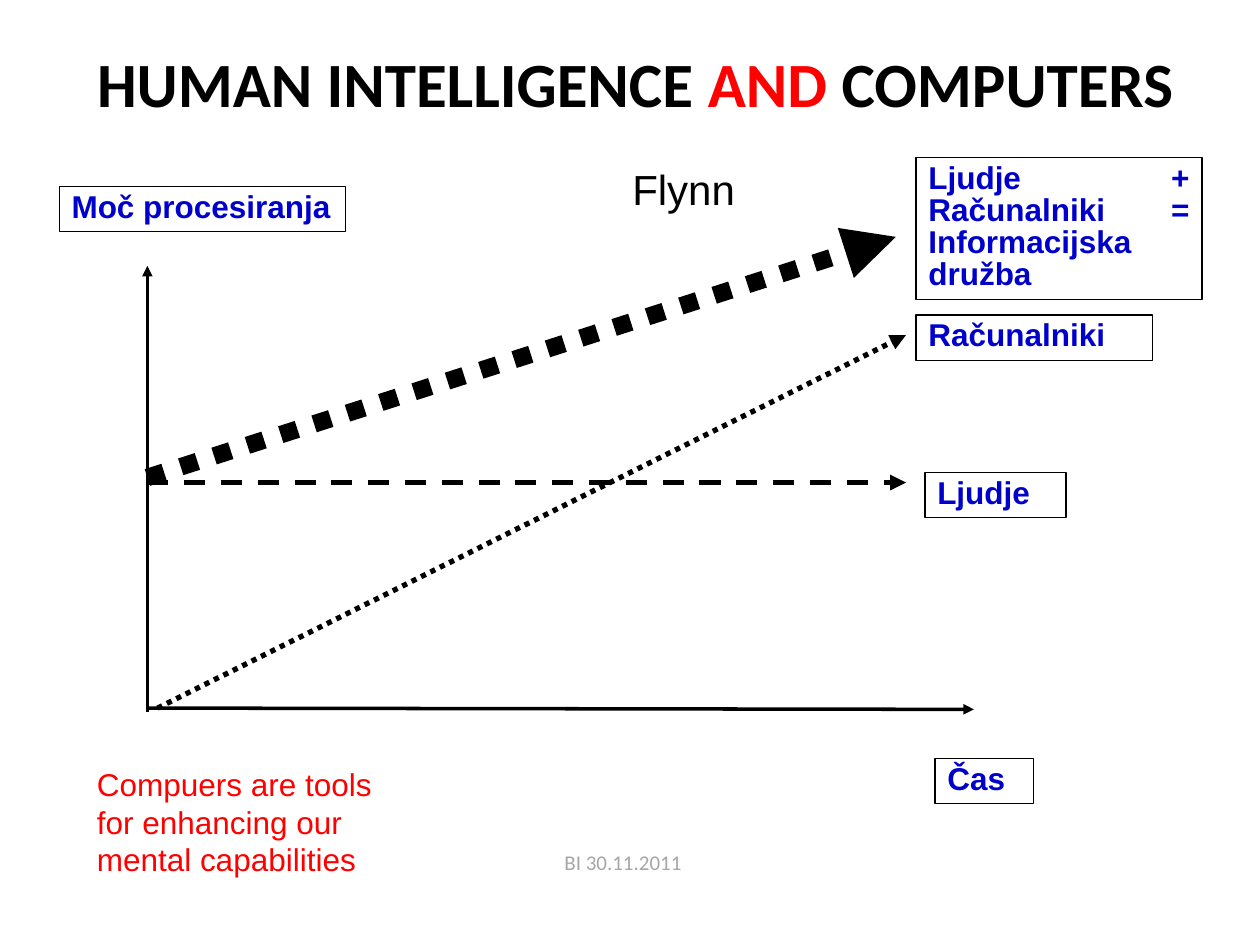
from pptx import Presentation
from pptx.dml.color import RGBColor
from pptx.enum.dml import MSO_LINE
from pptx.enum.shapes import MSO_CONNECTOR, MSO_SHAPE
from pptx.enum.text import MSO_ANCHOR, PP_ALIGN as Align
from pptx.oxml.ns import qn
from pptx.util import Inches, Pt
from lxml.etree import SubElement

COLORS = {"black": "000000", "white": "FFFFFF", "red": "FF0000",
          "blue": "0000CC", "gray": "A6A6A6"}

TITLE = [("HUMAN INTELLIGENCE ", "black"), ("AND ", "red"), ("COMPUTERS", "black")]
TITLE_AREA = (0.67, 0.3, 8.98, 0.71)

# Label, (left, top, width, height)
LABELS = [
    ("Moč procesiranja", (0.47, 1.48, 2.27, 0.36)),
    ("Čas", (7.42, 6.02, 0.78, 0.36)),
    ("Ljudje", (7.34, 3.75, 1.12, 0.36)),
    ("Računalniki", (7.27, 2.5, 1.88, 0.36)),
    ("Ljudje + Računalniki = Informacijska družba", (7.27, 1.25, 2.27, 1.13)),
]

# Start, end, width in points, dash
AXIS_X = 1.17
ARROWS = [
    ((AXIS_X, 5.62), (7.73, 5.63), 2, None),
    ((1.25, 5.62), (7.19, 2.66), 3, MSO_LINE.ROUND_DOT),
    ((AXIS_X, 3.83), (7.19, 3.83), 3, MSO_LINE.DASH),
    ((AXIS_X, 5.65), (AXIS_X, 2.11), 2, None),
    ((AXIS_X, 3.79), (7.11, 1.88), 10, MSO_LINE.ROUND_DOT),
]

# Text, area, size, font, colour, alignment, wrap
NOTES = [
    ("Flynn", (4.92, 1.25, 1.26, 0.5), 24, "Arial", "black", Align.LEFT, True),
    ("BI 30.11.2011", (2.81, 6.69, 4.27, 0.52), 12, "Calibri", "gray", Align.CENTER, False),
    ("Compuers are tools for enhancing our mental capabilities",
     (0.67, 6.02, 2.68, 1.01), 18, "Arial", "red", Align.LEFT, True),
]

LABEL_SPACING = {"alignment": Align.JUSTIFY, "line_spacing": 0.85, "space_before": Pt(3.6)}


def rgb(name):
    return RGBColor.from_string(COLORS[name])


def inches(values):
    return [Inches(value) for value in values]


def set_format(target, values):
    for name, value in values.items():
        setattr(target, name, value)


def add_run(paragraph, text, size, font, color, bold=False):
    run = paragraph.add_run()
    run.text = text
    set_format(run.font, {"size": Pt(size), "name": font, "bold": bold})
    run.font.color.rgb = rgb(color)


def add_title(slide):
    title = slide.shapes.title
    set_format(title, dict(zip(("left", "top", "width", "height"), inches(TITLE_AREA))))
    set_format(title.text_frame, {"vertical_anchor": MSO_ANCHOR.TOP, "word_wrap": True})
    paragraph = title.text_frame.paragraphs[0]
    paragraph.alignment = Align.LEFT
    for text, color in TITLE:
        add_run(paragraph, text, 36, "Calibri", color, bold=True)


def add_label(slide, text, area):
    label = slide.shapes.add_shape(MSO_SHAPE.RECTANGLE, *inches(area))
    label.shadow.inherit = False
    label.fill.solid()
    label.fill.fore_color.rgb = rgb("white")
    label.line.color.rgb = rgb("black")
    label.line.width = Pt(0.75)
    set_format(label.text_frame, {"vertical_anchor": MSO_ANCHOR.TOP, "word_wrap": True})
    paragraph = label.text_frame.paragraphs[0]
    set_format(paragraph, LABEL_SPACING)
    add_run(paragraph, text, 18, "Arial", "blue", bold=True)


def add_arrow(slide, start, end, width, dash):
    arrow = slide.shapes.add_connector(MSO_CONNECTOR.STRAIGHT, *inches(start + end))
    arrow.line.color.rgb = rgb("black")
    set_format(arrow.line, {"width": Pt(width), "dash_style": dash})
    SubElement(arrow.line._get_or_add_ln(), qn("a:tailEnd"), type="triangle")
    SubElement(arrow._element.spPr, qn("a:effectLst"))


def add_note(slide, text, area, size, font, color, alignment, wrap):
    note = slide.shapes.add_textbox(*inches(area))
    note.text_frame.word_wrap = wrap
    paragraph = note.text_frame.paragraphs[0]
    paragraph.alignment = alignment
    add_run(paragraph, text, size, font, color)


def main():
    deck = Presentation()
    set_format(deck, {"slide_width": Inches(10), "slide_height": Inches(7.5)})
    slide = deck.slides.add_slide(deck.slide_layouts.get_by_name("Title Only"))
    add_title(slide)
    for arrow in ARROWS:
        add_arrow(slide, *arrow)
    for label in LABELS:
        add_label(slide, *label)
    for note in NOTES:
        add_note(slide, *note)
    deck.save("out.pptx")


if __name__ == "__main__":
    main()
